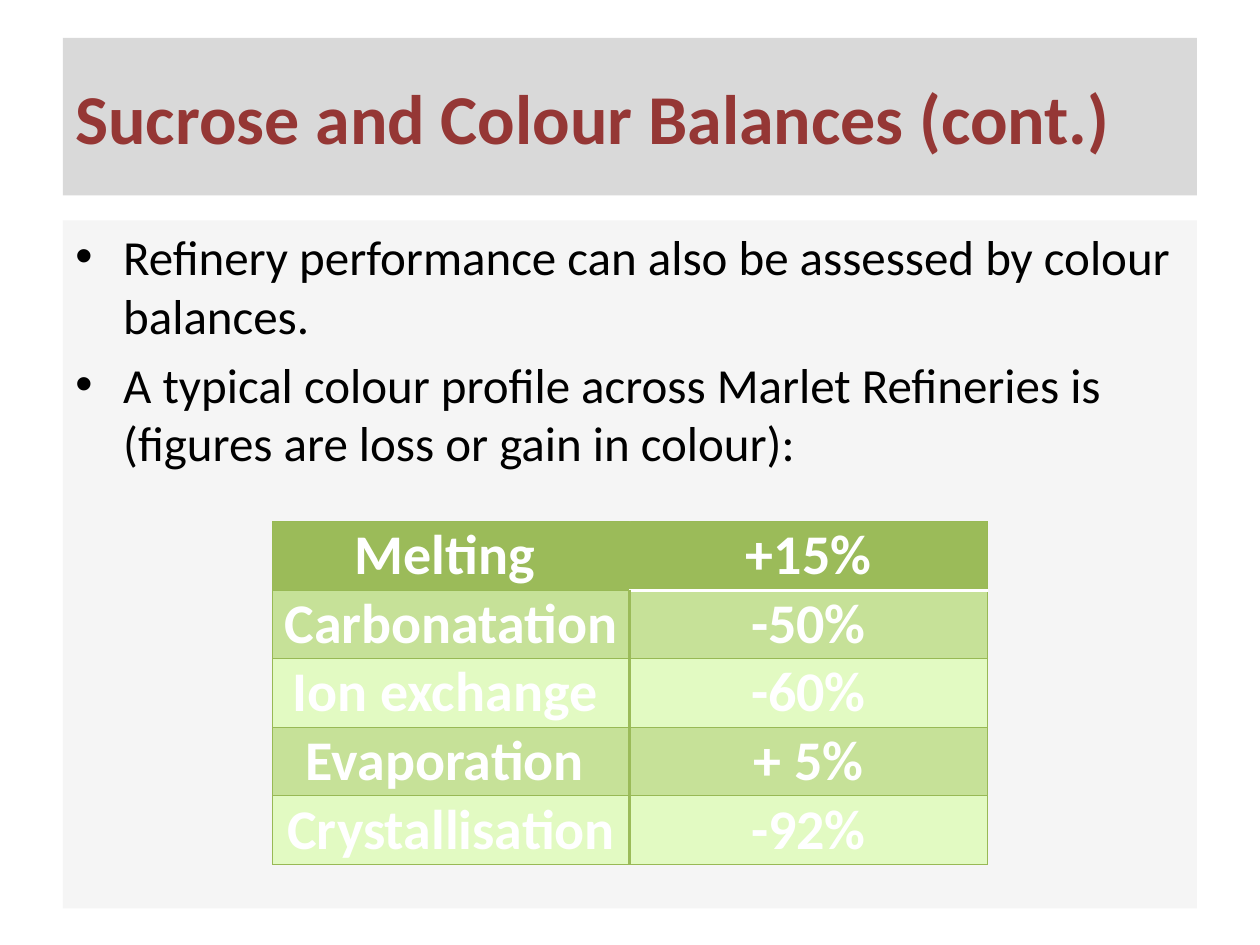
from lxml.etree import SubElement
from pptx import Presentation
from pptx.dml.color import RGBColor
from pptx.enum.shapes import MSO_SHAPE as SHAPE
from pptx.enum.text import MSO_ANCHOR as ANCHOR, PP_ALIGN as ALIGN
from pptx.oxml.ns import qn
from pptx.util import Inches, Pt

TITLE_FILL = RGBColor(0xD9, 0xD9, 0xD9)
BODY_FILL = RGBColor(0xF2, 0xF2, 0xF2)
MAROON = RGBColor(0x95, 0x37, 0x35)
BLACK = RGBColor(0, 0, 0)
WHITE = RGBColor(0xFF, 0xFF, 0xFF)
GREEN = RGBColor(0x9B, 0xBB, 0x59)
RULE = RGBColor(0x98, 0xB9, 0x55)
BAND = RGBColor(0xC6, 0xE1, 0x98)
PALE = RGBColor(0xE2, 0xFA, 0xC2)

prs = Presentation()
prs.slide_width, prs.slide_height = Inches(10), Inches(7.5)
W, H = prs.slide_width, prs.slide_height
s = prs.slides.add_slide(prs.slide_layouts[6])


def write(tf, text, size, color, bold=False, align=ALIGN.LEFT, bullet=False, before=0, new=False):
    p = tf.add_paragraph() if new else tf.paragraphs[0]
    p.alignment = align
    if before:
        p.space_before = Pt(before)
    if bullet:
        pPr = p._p.get_or_add_pPr()
        pPr.set("marL", str(Inches(0.38)))
        pPr.set("indent", str(-Inches(0.38)))
        SubElement(pPr, qn("a:buFont"), typeface="Arial")
        SubElement(pPr, qn("a:buChar"), char="•")
    r = p.add_run()
    r.text = text
    r.font.name, r.font.size, r.font.bold = "Calibri", Pt(size), bold
    r.font.color.rgb = color


def border(cell, side, color, width):
    ln = SubElement(cell._tc.get_or_add_tcPr(), qn(f"a:ln{side}"), w=str(Pt(width)))
    SubElement(SubElement(ln, qn("a:solidFill")), qn("a:srgbClr"), val=str(color))


frames = []
for top, height, color, anchor in (
    (0.04, 1.25 / 7.5, TITLE_FILL, ANCHOR.MIDDLE),
    (1.75 / 7.5, 5.46 / 7.5, BODY_FILL, ANCHOR.TOP),
):
    sp = s.shapes.add_shape(SHAPE.RECTANGLE, int(W * 0.05), int(H * top), int(W * 0.9), int(H * height))
    sp.shadow.inherit = False
    sp.fill.solid()
    sp.fill.fore_color.rgb = color
    sp.line.fill.background()
    tf = sp.text_frame
    tf.word_wrap = True
    tf.vertical_anchor = anchor
    frames.append(tf)

SubElement(sp._element.spPr.find(qn("a:solidFill"))[0], qn("a:alpha"), val="75000")

title, body = frames
write(title, "Sucrose and Colour Balances (cont.)", size=40, color=MAROON, bold=True)
write(body, "Refinery performance can also be assessed by colour balances.", size=28, color=BLACK, bullet=True)
write(body, "A typical colour profile across Marlet Refineries is (figures are loss or gain in colour):",
      size=28, color=BLACK, bullet=True, before=5.6, new=True)

rows = [
    ("Melting ", "+15%"),
    ("Carbonatation ", "-50%"),
    ("Ion exchange ", "-60%"),
    ("Evaporation ", "+ 5%"),
    ("Crystallisation ", "-92%"),
]
table_width, table_height = Inches(5.67), Inches(2.67)
table = s.shapes.add_table(len(rows), 2, (W - table_width) // 2, Inches(4.14), table_width, table_height).table

for i, row in enumerate(rows):
    for j, text in enumerate(row):
        cell = table.cell(i, j)
        cell.margin_left = cell.margin_right = Inches(0.07)
        cell.margin_top = cell.margin_bottom = 0
        write(cell.text_frame, text, size=32, color=WHITE, bold=True, align=ALIGN.CENTER)

        lines = {side: (RULE, 0.75) for side in "LRTB"}
        if i == 0:
            lines["R" if j == 0 else "L"] = (GREEN, 0.75)
        else:
            lines["R" if j == 0 else "L"] = (GREEN, 2)
        if j == 1 and i < 2:
            lines["B" if i == 0 else "T"] = (WHITE, 2)
        for side, (color, width) in lines.items():
            border(cell, side, color, width)

        cell.fill.solid()
        cell.fill.fore_color.rgb = GREEN if i == 0 else BAND if i % 2 else PALE

prs.save("out.pptx")
